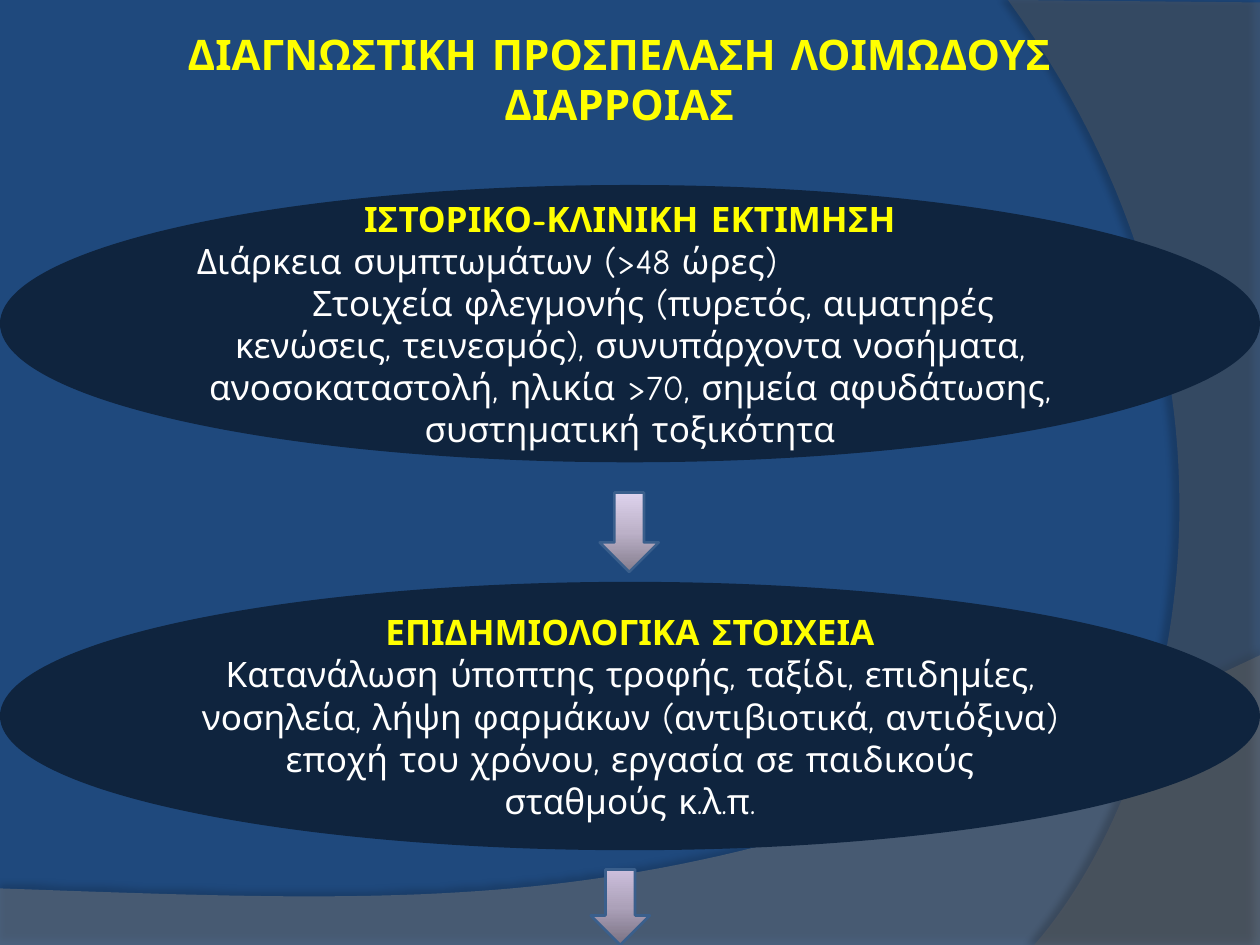
import pptx
import pptx.dml.color
import pptx.enum.shapes
import pptx.enum.text
import pptx.oxml.ns
import pptx.util
import copy
from lxml import etree
from pptx.util import Cm

FONT = "Comic Neue"
COLORS = {
    "background": "1F497D",
    "heading": "FFFF00",
    "body": "FFFFFF",
    "ellipse": "0F243E",
    "arrow_line": "3A5F8C",
    "lower_wave": "7F7F7F",
    "right_wave": "5E5E5E",
}
qn = pptx.oxml.ns.qn
ALIGN = pptx.enum.text.PP_ALIGN
SHAPE = pptx.enum.shapes.MSO_SHAPE


def rgb(value):
    return pptx.dml.color.RGBColor.from_string(value)


def style_paragraph(paragraph, size, color, bold, align):
    paragraph.alignment = align
    paragraph.font.name = FONT
    paragraph.font.size = pptx.util.Pt(size)
    paragraph.font.bold = bold
    paragraph.font.color.rgb = rgb(color)


presentation = pptx.Presentation()
presentation.slide_width = Cm(25.4)
presentation.slide_height = Cm(19.05)
slide = presentation.slides.add_slide(presentation.slide_layouts[5])
slide.background.fill.solid()
slide.background.fill.fore_color.rgb = rgb(COLORS["background"])

# Background waves: straight corners, then one Bezier edge from the last corner.
# color, opacity %, shadow opacity %, shadow distance pt, shadow direction, corners, curve
waves = [
    ("lower_wave", 45, 35, 3.5, 270,
     [(0, 17.91), (0, 19.05), (25.4, 19.05), (25.4, 13.21)],
     [(14.2, 18.52), (9.93, 18.26), (0, 17.91)]),
    ("right_wave", 40, 45, 4, 180,
     [(25.4, 0.05), (25.4, 19.05), (20.85, 19.05)],
     [(23.75, 15.72), (25.86, 7.62), (20.32, 0)]),
]
STEPS = 60
for color, opacity, shadow_opacity, distance, direction, corners, curve in waves:
    controls = [corners[-1]] + curve
    outline = list(corners)
    for step in range(1, STEPS + 1):
        t = step / STEPS
        weights = ((1 - t) ** 3, 3 * t * (1 - t) ** 2, 3 * t ** 2 * (1 - t), t ** 3)
        outline.append(tuple(sum(w * point[axis] for w, point in zip(weights, controls))
                             for axis in (0, 1)))
    points = [(Cm(x), Cm(y)) for x, y in outline]
    builder = slide.shapes.build_freeform(*points[0], scale=1.0)
    builder.add_line_segments(points[1:], close=True)
    wave = builder.convert_to_shape()
    wave.line.fill.background()
    wave.fill.solid()
    wave.fill.fore_color.rgb = rgb(COLORS[color])
    wave.shadow.inherit = False
    properties = wave._element.spPr
    fill_color = properties.find(qn("a:solidFill")).find(qn("a:srgbClr"))
    etree.SubElement(fill_color, qn("a:alpha"), val=str(opacity * 1000))
    shadow = etree.SubElement(
        properties.find(qn("a:effectLst")), qn("a:outerShdw"),
        blurRad=str(pptx.util.Pt(4)), dist=str(pptx.util.Pt(distance)),
        dir=str(direction * 60000), algn="ctr", rotWithShape="0")
    shadow_color = etree.SubElement(shadow, qn("a:srgbClr"), val="000000")
    etree.SubElement(shadow_color, qn("a:alpha"), val=str(shadow_opacity * 1000))

title = slide.shapes.title
slide.shapes._spTree.append(title._element)  # in front of the waves
title.left, title.top, title.width, title.height = Cm(2.11), Cm(0), Cm(20.75), Cm(3.18)
heading = title.text_frame
heading.text = "ΔΙΑΓΝΩΣΤΙΚΗ ΠΡΟΣΠΕΛΑΣΗ ΛΟΙΜΩΔΟΥΣ ΔΙΑΡΡΟΙΑΣ"
heading.word_wrap = True
heading.auto_size = pptx.enum.text.MSO_AUTO_SIZE.NONE
heading.vertical_anchor = pptx.enum.text.MSO_ANCHOR.MIDDLE
heading.margin_left = heading.margin_right = Cm(0.13)
heading.margin_top = heading.margin_bottom = Cm(0.13)
style_paragraph(heading.paragraphs[0], 24, COLORS["heading"], True, ALIGN.CENTER)

# Each step: ellipse top and height, heading, body as (text, alignment, first-line
# indent), then the arrow below as left, top, height and gradient colors
steps = [
    (3.73, 5.59, "ΙΣΤΟΡΙΚΟ-ΚΛΙΝΙΚΗ ΕΚΤΙΜΗΣΗ",
     [("Διάρκεια συμπτωμάτων (>48 ώρες)", ALIGN.LEFT, 0),
      ("Στοιχεία φλεγμονής (πυρετός, αιματηρές κενώσεις, τεινεσμός), "
       "συνυπάρχοντα νοσήματα, ανοσοκαταστολή, ηλικία >70, "
       "σημεία αφυδάτωσης, συστηματική τοξικότητα", ALIGN.CENTER, 0.94)],
     (12.09, 9.93, 1.6, ["847D8D", "BCB1C8", "DED3ED"])),
    (11.73, 5.41, "ΕΠΙΔΗΜΙΟΛΟΓΙΚΑ ΣΤΟΙΧΕΙΑ",
     [("Κατανάλωση ύποπτης τροφής, ταξίδι, επιδημίες, νοσηλεία, "
       "λήψη φαρμάκων (αντιβιοτικά, αντιόξινα) εποχή του χρόνου, "
       "εργασία σε παιδικούς\vσταθμούς κ.λ.π.", ALIGN.CENTER, 0)],
     (11.91, 17.53, 1.52, ["797182", "ACA1B9", "CCBFDC"])),
]
for top, height, step_heading, body, arrow_spec in steps:
    ellipse = slide.shapes.add_shape(SHAPE.OVAL, Cm(0), Cm(top), Cm(25.4), Cm(height))
    ellipse.shadow.inherit = False
    ellipse.fill.solid()
    ellipse.fill.fore_color.rgb = rgb(COLORS["ellipse"])
    ellipse.line.fill.background()
    frame = ellipse.text_frame
    frame.word_wrap = True
    frame.text = step_heading
    style_paragraph(frame.paragraphs[0], 20, COLORS["heading"], True, ALIGN.CENTER)
    for text, align, indent in body:
        paragraph = frame.add_paragraph()
        paragraph.text = text
        style_paragraph(paragraph, 20, COLORS["body"], False, align)
        if indent:
            paragraph._p.get_or_add_pPr().set("indent", str(Cm(indent)))

    arrow_left, arrow_top, arrow_height, gradient = arrow_spec
    arrow = slide.shapes.add_shape(SHAPE.DOWN_ARROW, Cm(arrow_left), Cm(arrow_top),
                                   Cm(1.19), Cm(arrow_height))
    arrow.shadow.inherit = False
    arrow.line.color.rgb = rgb(COLORS["arrow_line"])
    arrow.line.width = pptx.util.Pt(1.5)
    arrow.fill.gradient()
    arrow.fill.gradient_angle = 90
    stop_list = arrow._element.spPr.find(qn("a:gradFill")).find(qn("a:gsLst"))
    stop_list.insert(1, copy.deepcopy(stop_list[0]))
    for stop, color, position in zip(arrow.fill.gradient_stops, gradient, (0, 0.5, 1)):
        stop.color.rgb = rgb(color)
        stop.position = position

presentation.save("out.pptx")
